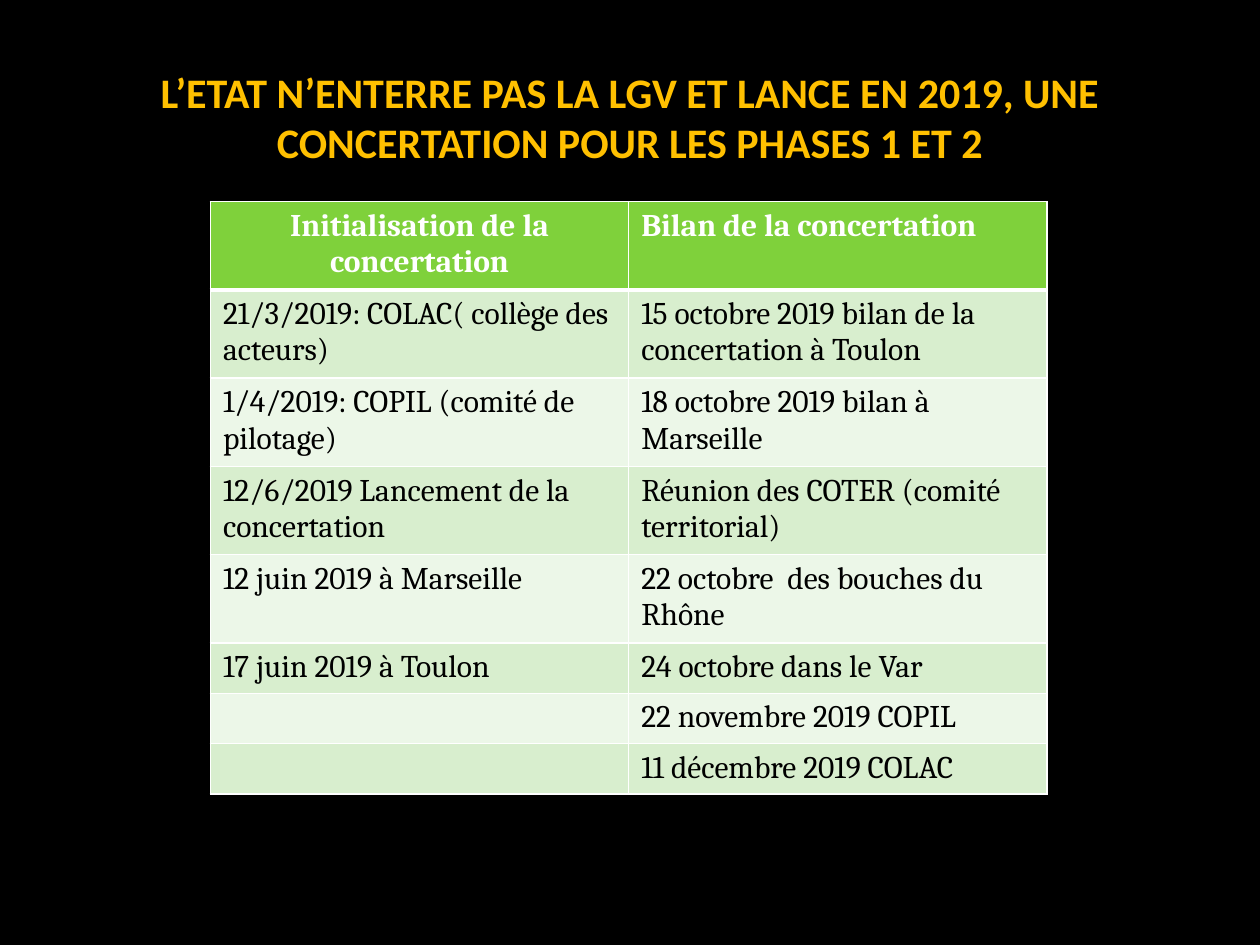
import pptx
import pptx.dml.color
import pptx.enum.text
import pptx.oxml.ns
import pptx.util
from lxml import etree

RGB = pptx.dml.color.RGBColor
Inches, Pt = pptx.util.Inches, pptx.util.Pt
CENTER = pptx.enum.text.PP_ALIGN.CENTER
LEFT = pptx.enum.text.PP_ALIGN.LEFT

BLACK = RGB(0x00, 0x00, 0x00)
WHITE = RGB(0xFF, 0xFF, 0xFF)
GOLD = RGB(0xFF, 0xC0, 0x00)
GREEN = RGB(0x7F, 0xD1, 0x3B)
BANDS = [RGB(0xD8, 0xEE, 0xCE), RGB(0xEC, 0xF7, 0xE8)]

TITLE = "L’ETAT N’ENTERRE PAS LA LGV ET LANCE EN 2019, UNE CONCERTATION POUR LES PHASES 1 ET 2"
ROWS = [
    ("Initialisation de la concertation", "Bilan de la concertation"),
    ("21/3/2019: COLAC( collège des acteurs)", "15 octobre 2019 bilan de la concertation à Toulon"),
    ("1/4/2019: COPIL (comité de pilotage)", "18 octobre 2019 bilan à Marseille"),
    ("12/6/2019 Lancement de la concertation", "Réunion des COTER (comité territorial)"),
    ("12 juin 2019 à Marseille", "22 octobre  des bouches du Rhône"),
    ("17 juin 2019 à Toulon", "24 octobre dans le Var"),
    ("", "22 novembre 2019 COPIL"),
    ("", "11 décembre 2019 COLAC"),
]

SLIDE_WIDTH, SLIDE_HEIGHT = 10, 7.5
TITLE_BOX = (0.05 * SLIDE_WIDTH, 0.04 * SLIDE_HEIGHT, 0.9 * SLIDE_WIDTH, 1.25)
TABLE_LEFT, TABLE_TOP = 1.67, 1.6
COLUMN_WIDTH, ROW_HEIGHT = 3.32, 0.32  # rows grow to fit their text
THIN, THICK = 1, 3

TITLE_FONT = {"name": "Calibri", "size": Pt(24), "bold": True}
HEADER_FONT = {"name": "Cambria", "size": Pt(18), "bold": True}
BODY_FONT = {**HEADER_FONT, "bold": False}


def write(frame, text, font, color, align):
    para = frame.paragraphs[0]
    para.alignment = align
    para.font.size = font["size"]
    if not text:
        return
    span = para.add_run()
    span.text = text
    for name, value in font.items():
        setattr(span.font, name, value)
    span.font.color.rgb = color


def add_borders(cell, widths):
    """Draw white cell borders; widths maps L, R, T, B to points."""
    properties = cell._tc.get_or_add_tcPr()
    qn = pptx.oxml.ns.qn
    for side, width in widths.items():
        line = etree.SubElement(properties, qn(f"a:ln{side}"), w=str(Pt(width)))
        fill = etree.SubElement(line, qn("a:solidFill"))
        etree.SubElement(fill, qn("a:srgbClr"), val=str(WHITE))


def add_title(page):
    box = page.shapes.add_textbox(*map(Inches, TITLE_BOX))
    box.text_frame.word_wrap = True
    box.text_frame.vertical_anchor = pptx.enum.text.MSO_ANCHOR.MIDDLE
    write(box.text_frame, TITLE, TITLE_FONT, GOLD, CENTER)


def add_schedule(page):
    size = (len(ROWS[0]) * COLUMN_WIDTH, len(ROWS) * ROW_HEIGHT)
    table = page.shapes.add_table(
        len(ROWS), len(ROWS[0]), *map(Inches, (TABLE_LEFT, TABLE_TOP, *size))
    ).table
    for r, texts in enumerate(ROWS):
        header = r == 0
        for c, text in enumerate(texts):
            cell = table.cell(r, c)
            add_borders(cell, {
                "L": THIN,
                "R": THIN,
                "T": THICK if r == 1 else THIN,
                "B": THICK if header else THIN,
            })
            cell.fill.solid()
            cell.fill.fore_color.rgb = GREEN if header else BANDS[(r - 1) % 2]
            write(
                cell.text_frame,
                text,
                HEADER_FONT if header else BODY_FONT,
                WHITE if header else BLACK,
                CENTER if header and c == 0 else LEFT,
            )


def main():
    deck = pptx.Presentation()
    deck.slide_width, deck.slide_height = Inches(SLIDE_WIDTH), Inches(SLIDE_HEIGHT)
    page = deck.slides.add_slide(deck.slide_layouts[6])
    page.background.fill.solid()
    page.background.fill.fore_color.rgb = BLACK
    add_title(page)
    add_schedule(page)
    deck.save("out.pptx")


if __name__ == "__main__":
    main()
